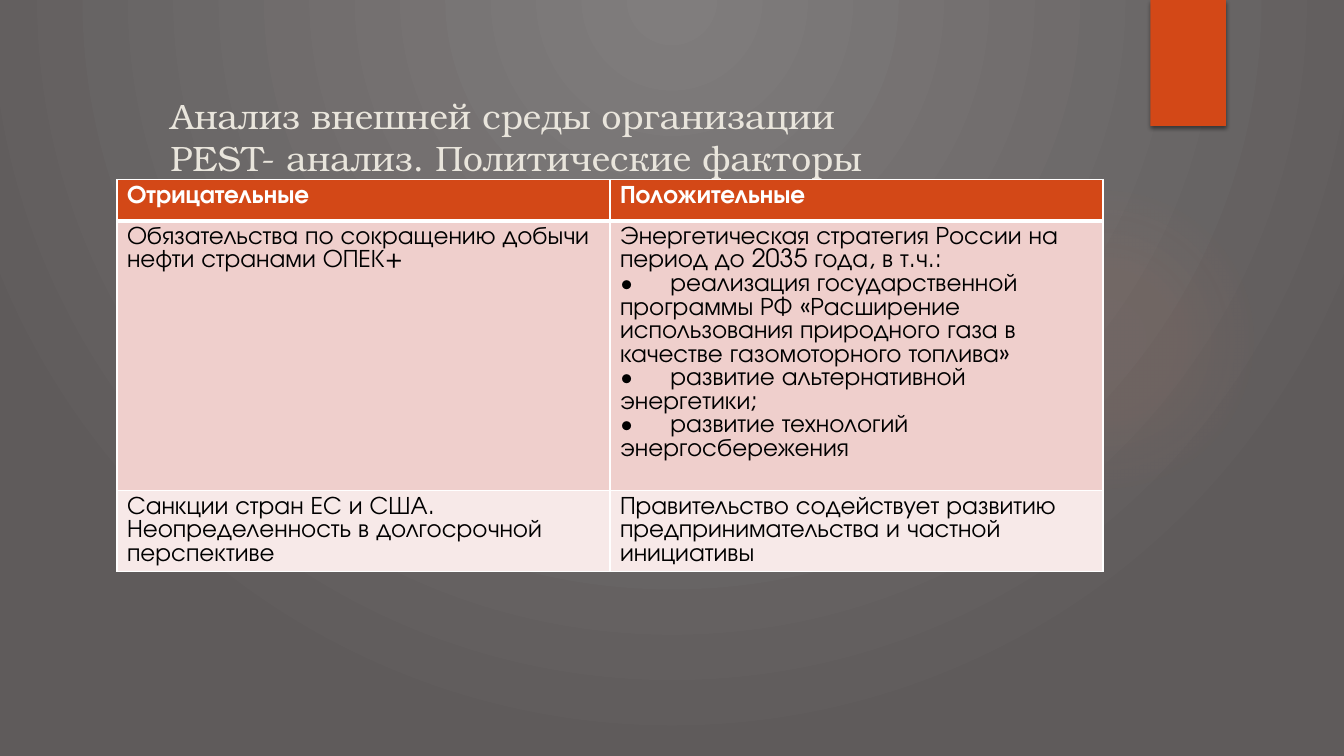
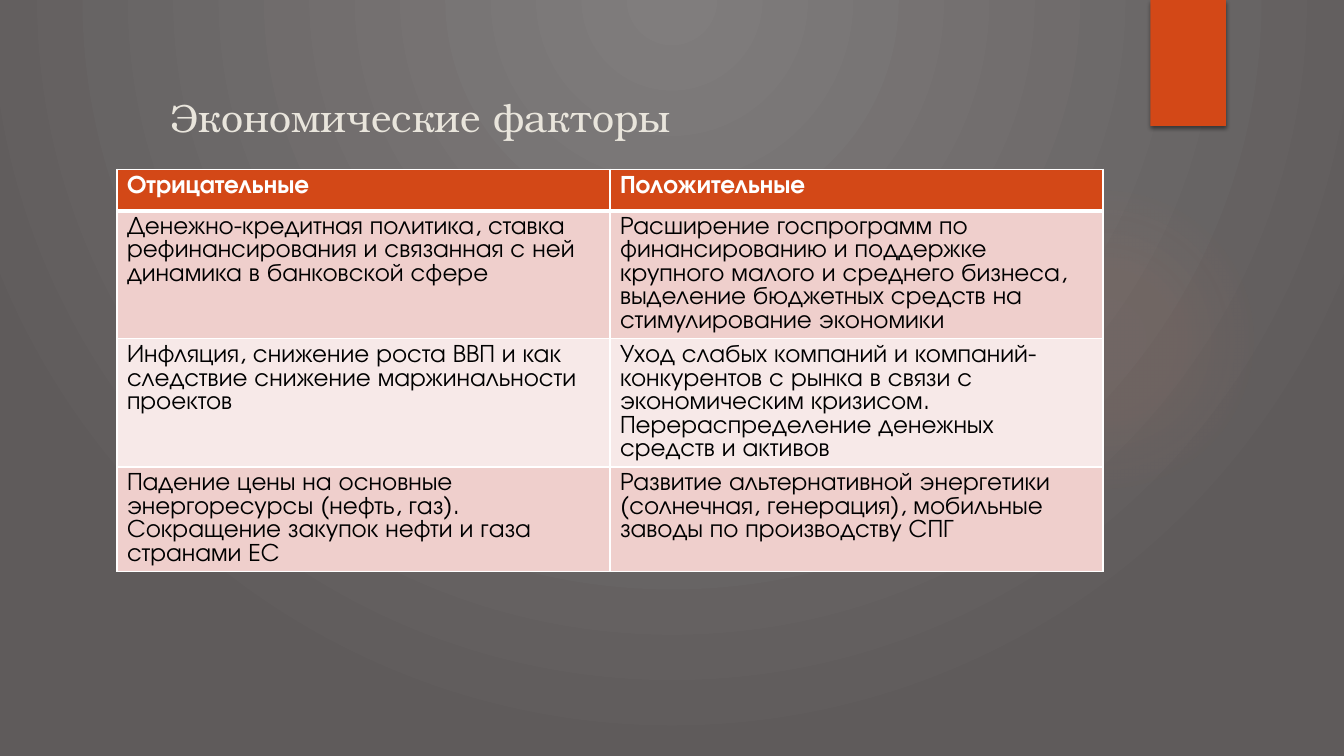
"""Two PEST analysis slides: political and economic factors."""
from lxml import etree
from pptx import Presentation
from pptx import util as u
from pptx.dml.color import RGBColor
from pptx.enum import shapes, text
from pptx.oxml import parse_xml
from pptx.oxml.ns import nsdecls, qn

WIDTH, HEIGHT = u.Inches(13.33), u.Inches(7.5)
ORANGE = RGBColor(0xD3, 0x48, 0x17)
GLOW = RGBColor(0xEF, 0x8C, 0x6A)
GREY_LIGHT = RGBColor(0x80, 0x7D, 0x7D)
GREY_DARK = RGBColor(0x5F, 0x5B, 0x5B)
CREAM = RGBColor(0xE9, 0xE5, 0xDC)
BANDS = RGBColor(0xEF, 0xCF, 0xCC), RGBColor(0xF7, 0xE9, 0xE8)
WHITE = RGBColor(0xFF, 0xFF, 0xFF)
BLACK = RGBColor(0, 0, 0)
TITLE_FONT, BODY_FONT = "TeX Gyre Bonum", "TeX Gyre Adventor"

TABLE_LEFT, COLUMN = u.Inches(1.16), u.Inches(4.89)
HEADER_HEIGHT, LINE_HEIGHT, CELL_PADDING = u.Inches(0.41), u.Pt(16.87), u.Inches(0.1)
HEADINGS = "Отрицательные", "Положительные"

POLITICAL = [
    (11, "Обязательства по сокращению добычи нефти странами ОПЕК+",
     "Энергетическая стратегия России на период до 2035 года, в т.ч.:\n"
     "•\tреализация государственной программы РФ «Расширение использования "
     "природного газа в качестве газомоторного топлива»\n"
     "•\tразвитие альтернативной энергетики;\n"
     "•\tразвитие технологий энергосбережения"),
    (3, "Санкции стран ЕС и США. Неопределенность в долгосрочной перспективе",
     "Правительство содействует развитию предпринимательства и частной инициативы"),
]
ECONOMIC = [
    (5, "Денежно-кредитная политика, ставка рефинансирования и связанная с ней "
        "динамика в банковской сфере",
     "Расширение госпрограмм по финансированию и поддержке крупного малого и "
     "среднего бизнеса, выделение бюджетных средств на стимулирование экономики"),
    (5, "Инфляция, снижение роста ВВП и как следствие снижение маржинальности проектов",
     "Уход слабых компаний и компаний-конкурентов с рынка в связи с экономическим "
     "кризисом. Перераспределение денежных средств и активов"),
    (4, "Падение цены на основные энергоресурсы (нефть, газ). Сокращение закупок "
        "нефти и газа странами ЕС",
     "Развитие альтернативной энергетики (солнечная, генерация), мобильные заводы "
     "по производству СПГ"),
]


def make_radial(solid, stops, focus):
    """Replace a solid fill element by a circular gradient."""
    marks = "".join(
        f'<a:gs pos="{pos * 1000}"><a:srgbClr val="{color}">'
        f'<a:alpha val="{alpha * 1000}"/></a:srgbClr></a:gs>'
        for pos, color, alpha in stops)
    sides = " ".join(f'{side}="{share * 1000}"' for side, share in zip("ltrb", focus))
    solid.getparent().replace(solid, parse_xml(
        f'<a:gradFill {nsdecls("a")} rotWithShape="1"><a:gsLst>{marks}</a:gsLst>'
        f'<a:path path="circle"><a:fillToRect {sides}/></a:path></a:gradFill>'))


def add_master_shape(prs, slide, preset, box, color):
    """Draw a filled shape and move it behind everything on the master."""
    shape = slide.shapes.add_shape(preset, *(u.Inches(side) for side in box))
    shape.shadow.inherit = False
    shape.fill.solid()
    shape.fill.fore_color.rgb = color
    shape.line.fill.background()
    tree = prs.slide_master.shapes.element
    shape.element.nvSpPr.cNvPr.id = 100 + len(tree)
    tree.insert(2, shape.element)
    return shape


def style_master(prs, slide):
    """Give the master its background, glow and orange tab."""
    master = prs.slide_master
    master.background.fill.solid()
    master.background.fill.fore_color.rgb = GREY_DARK
    make_radial(master.element.find(".//" + qn("p:bgPr") + "/" + qn("a:solidFill")),
                [(0, GREY_LIGHT, 100), (100, GREY_DARK, 100)], (43, 0, 43, 100))
    tab = add_master_shape(prs, slide, shapes.MSO_SHAPE.RECTANGLE, (11.41, 0, 0.75, 1.25), ORANGE)
    tab.element.spPr.find(qn("a:effectLst")).append(parse_xml(
        f'<a:outerShdw {nsdecls("a")} blurRad="{u.Pt(3)}" dist="{u.Pt(2)}" dir="5400000" '
        'algn="t" rotWithShape="0"><a:srgbClr val="000000"><a:alpha val="45000"/>'
        '</a:srgbClr></a:outerShdw>'))
    glow = add_master_shape(prs, slide, shapes.MSO_SHAPE.OVAL, (9.41, 1.83, 3.08, 3.08), GLOW)
    make_radial(glow.element.spPr.find(qn("a:solidFill")),
                [(0, GLOW, 7), (36, GLOW, 6), (69, GLOW, 0)], (50, 50, 50, 50))


def style_font(paragraph, name, size, color, bold=False):
    """Format every run of a paragraph."""
    for run in paragraph.runs:
        run.font.name, run.font.size, run.font.bold = name, u.Pt(size), bold
        run.font.color.rgb = color


def set_title(slide, words, size, width):
    """Place and format the title placeholder."""
    title = slide.shapes.title
    title.left, title.top = u.Inches(1.59), u.Inches(0.88)
    title.width, title.height = u.Inches(width), u.Inches(0.8)
    frame = title.text_frame
    frame.text = words
    frame.word_wrap = True
    frame.auto_size = text.MSO_AUTO_SIZE.NONE
    frame.vertical_anchor = text.MSO_ANCHOR.TOP
    heading = frame.paragraphs[0]
    heading.alignment = text.PP_ALIGN.LEFT
    style_font(heading, TITLE_FONT, size, CREAM)


def set_borders(cell, top, bottom):
    """Draw white borders round a cell."""
    properties = cell._tc.get_or_add_tcPr()
    for index, (side, width) in enumerate((("L", 1), ("R", 1), ("T", top), ("B", bottom))):
        properties.insert(index, parse_xml(
            f'<a:ln{side} {nsdecls("a")} w="{u.Pt(width)}"><a:solidFill>'
            f'<a:srgbClr val="{WHITE}"/></a:solidFill></a:ln{side}>'))


def fill_cell(cell, words, row):
    """Write one table cell in the style of its row."""
    header = row == 0
    cell.text_frame.text = words
    for paragraph in cell.text_frame.paragraphs:
        if "\t" in paragraph.text:
            tabs = etree.SubElement(paragraph._p.get_or_add_pPr(), qn("a:tabLst"))
            etree.SubElement(tabs, qn("a:tab"), pos=str(u.Inches(0.5)), algn="l")
        style_font(paragraph, BODY_FONT, 18, WHITE if header else BLACK, header)
    cell.fill.solid()
    cell.fill.fore_color.rgb = ORANGE if header else BANDS[(row - 1) % 2]
    set_borders(cell, 3 if row == 1 else 1, 3 if header else 1)


def add_factors(slide, top, factors):
    """Add the two-column table of negative and positive factors."""
    heights = [HEADER_HEIGHT] + [lines * LINE_HEIGHT + CELL_PADDING for lines, *_ in factors]
    rows = [HEADINGS] + [pair for _, *pair in factors]
    table = slide.shapes.add_table(len(rows), 2, TABLE_LEFT, u.Inches(top),
                                   2 * COLUMN, sum(heights)).table
    for column in table.columns:
        column.width = COLUMN
    for index, (height, pair) in enumerate(zip(heights, rows)):
        table.rows[index].height = height
        for cell, words in zip(table.rows[index].cells, pair):
            fill_cell(cell, words, index)


def main():
    """Build and save the presentation."""
    prs = Presentation()
    prs.slide_width, prs.slide_height = WIDTH, HEIGHT
    title_only = prs.slide_layouts[5]
    political, economic = (prs.slides.add_slide(title_only) for _ in range(2))
    style_master(prs, political)
    set_title(political, "Анализ внешней среды организации\vPEST- анализ. Политические факторы",
              25.2, 8.5)
    add_factors(political, 1.78, POLITICAL)
    set_title(economic, "Экономические факторы", 28, 8)
    add_factors(economic, 1.68, ECONOMIC)
    prs.save("out.pptx")


if __name__ == "__main__":
    main()
